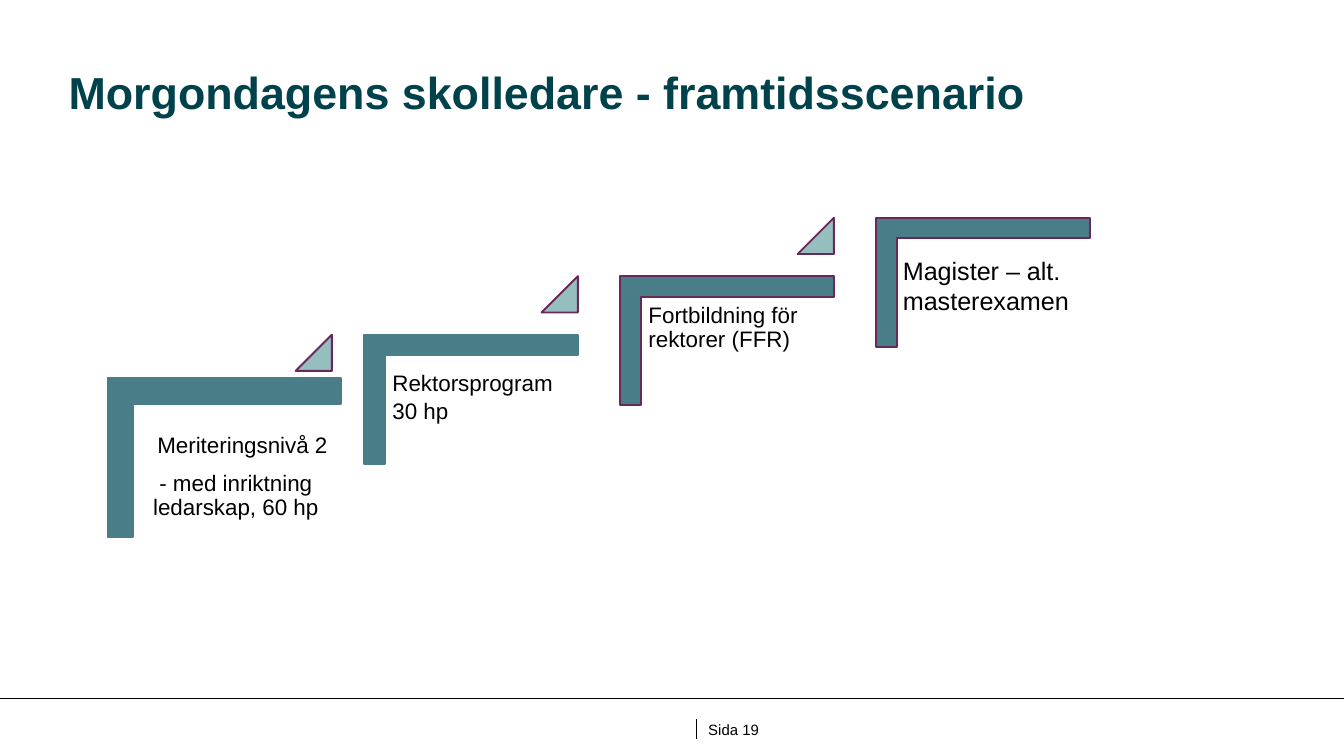
from lxml.etree import SubElement
from pptx import Presentation
from pptx.dml.color import RGBColor
from pptx.enum.shapes import MSO_CONNECTOR, MSO_SHAPE
from pptx.enum.text import MSO_ANCHOR, PP_ALIGN
from pptx.oxml.ns import qn
from pptx.util import Inches, Pt

COLUMNS, ROWS = 100, 56.25
CELL = Inches(0.1)
STEP_COLUMNS, STEP_ROWS = 19.05, -4.35
TEAL, MINT, PLUM = "497E89", "95BFBF", "692859"
DARK_TEAL, BLACK = "00424C", "000000"


def color(code):
    return RGBColor.from_string(code)


def cells(*counts):
    return [int(count * CELL) for count in counts]


def climb(column, row, step):
    return column + step * STEP_COLUMNS, row + step * STEP_ROWS


def add_rule(page, *ends):
    rule = page.shapes.add_connector(MSO_CONNECTOR.STRAIGHT, *cells(*ends))
    rule.line.color.rgb = color(BLACK)
    rule.line.width = Pt(0.5)
    SubElement(rule._element.spPr, qn("a:effectLst"))


def add_block(page, kind, place, fill, outline, adjustments, rotation=0):
    block = page.shapes.add_shape(kind, *cells(*place))
    block.shadow.inherit = False
    block.rotation = rotation
    for index, value in enumerate(adjustments):
        block.adjustments[index] = value
    block.fill.solid()
    block.fill.fore_color.rgb = color(fill)
    block.line.color.rgb = color(outline)
    block.line.width = Pt(1)


def add_corner(page, place, outline):
    add_block(page, MSO_SHAPE.CORNER, place, TEAL, outline, (0.161, 0.161), 90)


def add_triangle(page, column, row):
    place = (column, row, 2.7, 2.7)
    add_block(page, MSO_SHAPE.ISOSCELES_TRIANGLE, place, MINT, PLUM, (1,))


def add_text(page, place, text, size, insets=(0.5,) * 4, ink=BLACK,
             bold=False, spacing=0.9, wrap=True):
    box = page.shapes.add_textbox(*cells(*place))
    frame = box.text_frame
    frame.word_wrap = wrap
    frame.vertical_anchor = MSO_ANCHOR.TOP
    (frame.margin_left, frame.margin_top,
     frame.margin_right, frame.margin_bottom) = cells(*insets)
    frame.text = text
    for para in frame.paragraphs:
        para.line_spacing = spacing
        for span in para.runs:
            span.font.name = "Arial"
            span.font.size = Pt(size)
            span.font.bold = bold
            span.font.color.rgb = color(ink)
    return frame


def add_footer(page):
    add_rule(page, 0, 52, COLUMNS, 52)
    add_rule(page, 51.8, 55, 51.8, 53.5)
    add_text(page, (52.7, 53.65, 5, 1.4), "Sida 19", 8, (0,) * 4, spacing=1)


def add_first_step(page):
    add_corner(page, (10.8, 25.35, 11.8, 17.4), TEAL)
    frame = add_text(page, (9.6, 30.8, 15.9, 12.6),
                     "Meriteringsnivå 2\n- med inriktning ledarskap, 60 hp",
                     12, (0.7, 1.5, 0.7, 0.7))
    level, focus = frame.paragraphs
    level.space_after = Pt(7.5)
    level._p.get_or_add_pPr().set("marL", str(int(1.4 * CELL)))
    focus.alignment = PP_ALIGN.CENTER
    add_triangle(page, 22, 24.9)


def add_later_steps(page):
    for step, outline in enumerate((TEAL, PLUM, PLUM)):
        add_corner(page, (*climb(30.25, 21.75, step), 9.6, 15.9), outline)
    for step in range(2):
        add_triangle(page, *climb(40.3, 20.55, step))
    add_text(page, (*climb(28.7, 26.5, 0), 14.4, 12.6),
             "Rektorsprogram\v30 hp", 12, (0.5, 0.9, 0.5, 0.5), spacing=1.03)
    add_text(page, (*climb(28.7, 26.5, 1), 14.4, 12.6),
             "Fortbildning för rektorer (FFR)", 12)
    add_text(page, (66.2, 18.5, 14.5, 5.6), "Magister – alt.\nmasterexamen",
             13.5, (1, 0.5, 1, 0.5), spacing=1, wrap=False)


def main():
    deck = Presentation()
    deck.slide_width, deck.slide_height = cells(COLUMNS, ROWS)
    page = deck.slides.add_slide(deck.slide_layouts[6])
    add_footer(page)
    add_text(page, (5.1, 3.45, 86.5, 10.1),
             "Morgondagens skolledare - framtidsscenario", 24,
             (0, 0.5, 1, 0.5), DARK_TEAL, True, Pt(35))
    add_first_step(page)
    add_later_steps(page)
    deck.save("out.pptx")


if __name__ == "__main__":
    main()
